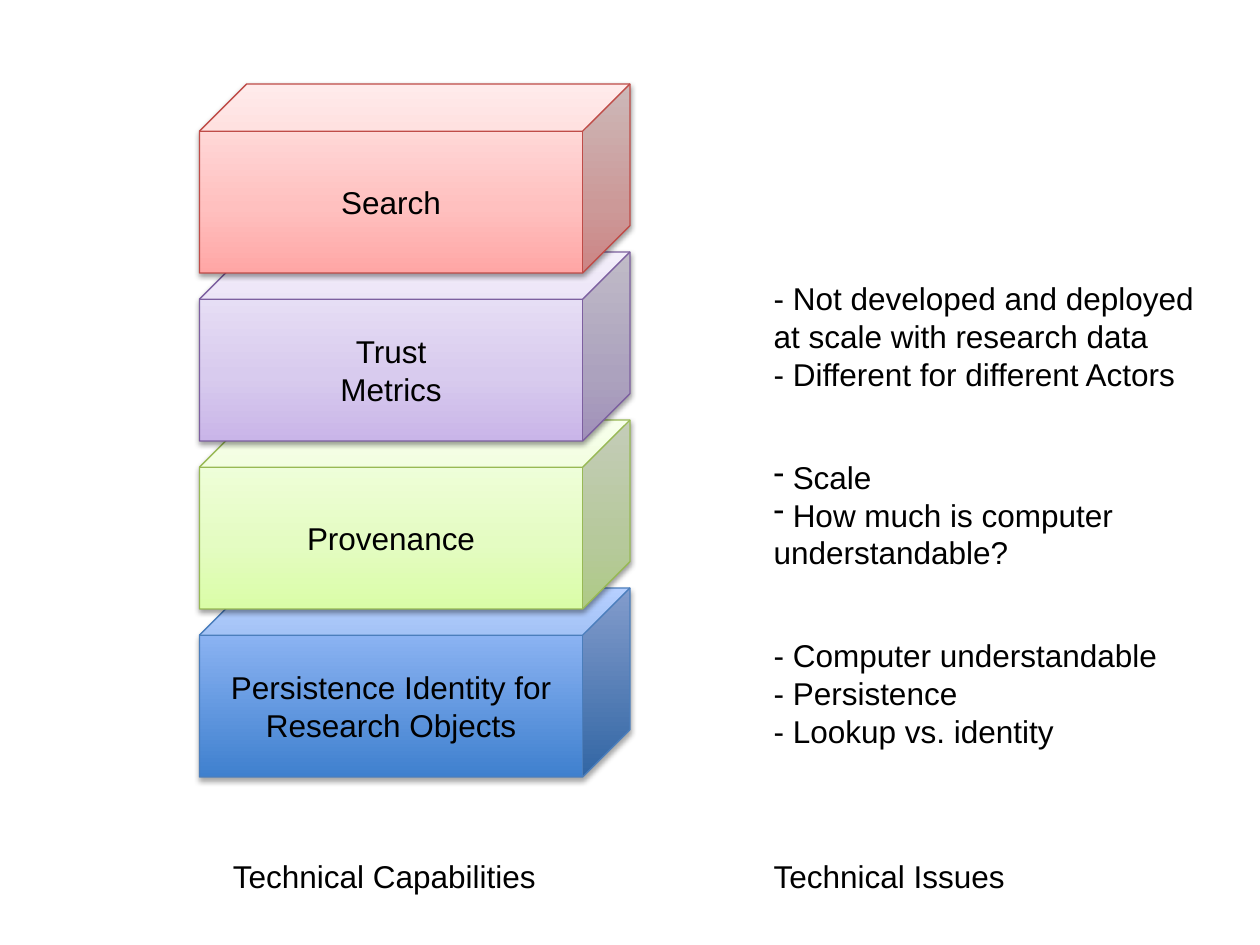
"""Build a slide of stacked technical capabilities beside their technical issues."""
from dataclasses import dataclass

from lxml import etree
from pptx import Presentation, util as u
from pptx.dml.color import RGBColor
from pptx.enum import shapes, text
from pptx.oxml import ns

EMU_PER_PX = 7620
CUBE_LEFT, CUBE_TOP, CUBE_WIDTH, CUBE_HEIGHT, CUBE_STEP = 190, 80, 410, 180, 160
CAPTION_TOP, CAPTION_HEIGHT = 810, 48
ISSUE_LEFT, ISSUE_TOP, ISSUE_WIDTH, ISSUE_HEIGHT, ISSUE_STEP = 725, 260, 435, 121, 170


@dataclass(frozen=True)
class Capability:
    lines: tuple[str, ...]
    stops: tuple[tuple[int, str], ...]
    outline: str
    shadow_opacity: int = 38
    shadow_distance: float = 1.6


@dataclass(frozen=True)
class Issue:
    lines: tuple[str, ...]
    bullet: str = ""


CAPABILITIES = (
    Capability(("Search",), ((0, "FFA6A5"), (35, "FFC0BF"), (100, "FFE7E7")), "BF4C48"),
    Capability(("Trust", "Metrics"), ((0, "C9B5E8"), (35, "D8CBEE"), (100, "F0EAF9")), "7D60A0"),
    Capability(("Provenance",), ((0, "DAFDA7"), (35, "E4FCC2"), (100, "F5FFE7")), "98B955"),
    Capability(("Persistence Identity for Research Objects",),
               ((0, "3F80CE"), (100, "A4C4FF")), "4B7EBC", 35, 1.8),
)
ISSUES = (
    Issue(("- Not developed and deployed at scale with research data",
           "- Different for different Actors")),
    Issue((" Scale", " How much is computer understandable?"), bullet="-"),
    Issue(("- Computer understandable", "- Persistence", "- Lookup vs. identity")),
)


def px(*lengths: int) -> list[u.Emu]:
    """Turn pixel lengths into EMU."""
    return [u.Emu(length * EMU_PER_PX) for length in lengths]


def color(value: str) -> RGBColor:
    """Turn a hex string into a colour."""
    return RGBColor.from_string(value)


def add_xml(parent, tag: str, **attributes):
    """Append a DrawingML element and return it."""
    values = {name: str(value) for name, value in attributes.items()}
    return etree.SubElement(parent, ns.qn(f"a:{tag}"), values)


def write_text(frame, lines, *, align=text.PP_ALIGN.LEFT, anchor=text.MSO_ANCHOR.TOP,
               wrap=True, grow=False, bullet="", size=18, font="Arial", fill="000000") -> None:
    """Write one paragraph per line with a shared format."""
    frame.word_wrap = wrap
    frame.vertical_anchor = anchor
    if grow:
        frame.auto_size = text.MSO_AUTO_SIZE.SHAPE_TO_FIT_TEXT
    for index, line in enumerate(lines):
        paragraph = frame.add_paragraph() if index else frame.paragraphs[0]
        paragraph.alignment = align
        run = paragraph.add_run()
        run.text = line
        run.font.size = u.Pt(size)
        run.font.name = font
        run.font.color.rgb = color(fill)
        if bullet:
            add_xml(paragraph._p.get_or_add_pPr(), "buChar", char=bullet)


def fill_gradient(shape, stops: tuple[tuple[int, str], ...]) -> None:
    """Fill a shape with a gradient that runs from bottom to top."""
    shape.fill.gradient()
    shape.fill.gradient_angle = 90
    stop_list = shape._element.spPr.find(".//" + ns.qn("a:gsLst"))
    for old_stop in list(stop_list):
        stop_list.remove(old_stop)
    for position, value in stops:
        add_xml(add_xml(stop_list, "gs", pos=position * 1000), "srgbClr", val=value)


def cast_shadow(shape, opacity: int, distance: float) -> None:
    """Give a shape a soft black shadow straight below it."""
    shape.shadow.inherit = False
    effects = shape._element.spPr.find(ns.qn("a:effectLst"))
    shadow = add_xml(effects, "outerShdw", blurRad=int(u.Pt(3.1)), dist=int(u.Pt(distance)),
                     dir=5400000, rotWithShape=0)
    add_xml(add_xml(shadow, "srgbClr", val="000000"), "alpha", val=opacity * 1000)


def draw_capability(slide, capability: Capability, top: int) -> None:
    """Draw one cube of the stack."""
    cube = slide.shapes.add_shape(shapes.MSO_SHAPE.CUBE,
                                  *px(CUBE_LEFT, top, CUBE_WIDTH, CUBE_HEIGHT))
    fill_gradient(cube, capability.stops)
    cube.line.color.rgb = color(capability.outline)
    cube.line.width = u.Pt(0.75)
    cast_shadow(cube, capability.shadow_opacity, capability.shadow_distance)
    write_text(cube.text_frame, capability.lines, align=text.PP_ALIGN.CENTER,
               anchor=text.MSO_ANCHOR.MIDDLE)


def draw_text_box(slide, box: tuple[int, int, int, int], lines, **formatting) -> None:
    """Draw a text box that grows with its text."""
    shape = slide.shapes.add_textbox(*px(*box))
    write_text(shape.text_frame, lines, grow=True, **formatting)


def main() -> None:
    """Build and save the slide."""
    presentation = Presentation()
    presentation.slide_width, presentation.slide_height = px(1200, 900)
    slide = presentation.slides.add_slide(presentation.slide_layouts[6])
    for level, capability in reversed(list(enumerate(CAPABILITIES))):
        draw_capability(slide, capability, CUBE_TOP + level * CUBE_STEP)
    for left, width, caption in ((210, 316, "Technical Capabilities"),
                                 (ISSUE_LEFT, 246, "Technical Issues")):
        draw_text_box(slide, (left, CAPTION_TOP, width, CAPTION_HEIGHT), [caption], wrap=False)
    for row, issue in enumerate(ISSUES):
        box = (ISSUE_LEFT, ISSUE_TOP + row * ISSUE_STEP, ISSUE_WIDTH, ISSUE_HEIGHT)
        draw_text_box(slide, box, issue.lines, bullet=issue.bullet)
    presentation.save("out.pptx")


if __name__ == "__main__":
    main()
